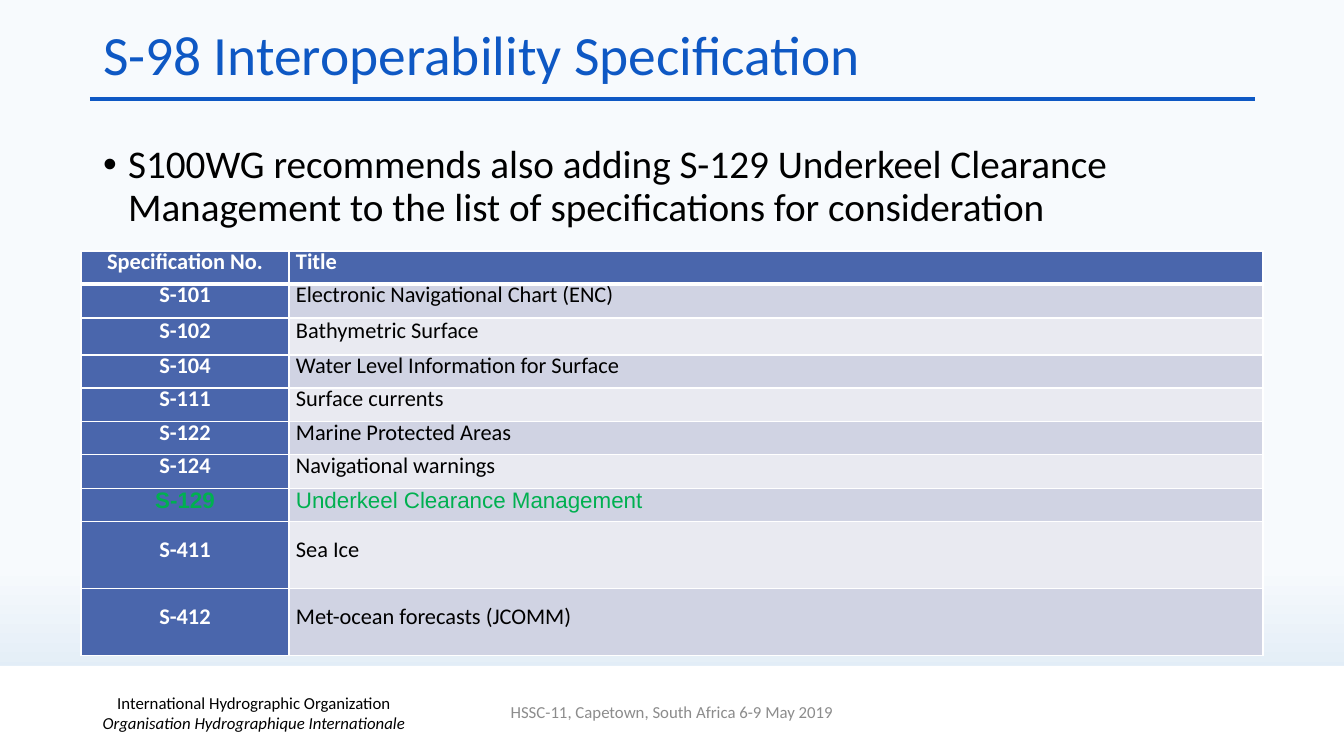
from lxml.etree import SubElement
from pptx import Presentation
from pptx.dml.color import RGBColor
from pptx.enum.shapes import MSO_CONNECTOR, MSO_SHAPE
from pptx.enum.text import MSO_ANCHOR, MSO_AUTO_SIZE, PP_ALIGN
from pptx.oxml.ns import qn
from pptx.util import Pt

WIDE, HIGH = 1344, 756
SCALE = 12192000 / WIDE

BLUE = RGBColor(0x0E, 0x58, 0xC4)
NAVY = RGBColor(0x4A, 0x66, 0xAC)
DARK = RGBColor(0xD0, 0xD3, 0xE3)
PALE = RGBColor(0xE9, 0xEA, 0xF1)
GREEN = RGBColor(0x00, 0xB0, 0x50)
GRAY = RGBColor(0x8C, 0x8C, 0x8C)
BLACK = RGBColor(0x00, 0x00, 0x00)
WHITE = RGBColor(0xFF, 0xFF, 0xFF)
SKY = RGBColor(0xF7, 0xFA, 0xFD)
SEA = RGBColor(0xD0, 0xE2, 0xF1)

ROWS = [
    ("Specification No.", "Title", 33),
    ("S-101", "Electronic Navigational Chart (ENC)", 34),
    ("S-102", "Bathymetric Surface", 37),
    ("S-104", "Water Level Information for Surface", 33),
    ("S-111", "Surface currents", 34),
    ("S-122", "Marine Protected Areas", 33),
    ("S-124", "Navigational warnings", 34),
    ("S-129", "Underkeel Clearance Management", 33),
    ("S-411", "Sea Ice", 67),
    ("S-412", "Met-ocean forecasts (JCOMM)", 67),
]
ADDED = "S-129"


def px(size):
    return round(size * SCALE)


def place(shape, box):
    shape.left, shape.top, shape.width, shape.height = map(px, box)


def style(para, size, color, bold=False, face="Calibri"):
    for run in para.runs:
        font = run.font
        font.name, font.size, font.bold = face, Pt(size), bold
        font.color.rgb = color


def label(slide, box, text, color):
    """A centred line of small text in a box."""
    frame = slide.shapes.add_textbox(*map(px, box)).text_frame
    frame.word_wrap = True
    frame.vertical_anchor = MSO_ANCHOR.MIDDLE
    para = frame.paragraphs[0]
    para.text = text
    para.alignment = PP_ALIGN.CENTER
    style(para, 12, color)
    return para


def paint(slide):
    """Background that deepens toward the foot."""
    fill = slide.background.fill
    fill.gradient()
    fill.gradient_angle = 270
    for stop, color, spot in zip(fill.gradient_stops, (SKY, SEA), (0.75, 1)):
        stop.color.rgb = color
        stop.position = spot


def head(slide, box):
    """Title with a rule below it."""
    left, top, width, height = box
    title = slide.shapes.title
    place(title, box)
    frame = title.text_frame
    frame.text = "S-98 Interoperability Specification"
    frame.auto_size = MSO_AUTO_SIZE.NONE
    frame.vertical_anchor = MSO_ANCHOR.MIDDLE
    para = frame.paragraphs[0]
    para.alignment = PP_ALIGN.LEFT
    para.line_spacing = 0.9
    style(para, 39.6, BLUE)

    base = px(top + height + 12)
    rule = slide.shapes.add_connector(
        MSO_CONNECTOR.STRAIGHT, px(left - 3), base, px(left + width + 3), base)
    rule.line.color.rgb = BLUE
    rule.line.width = Pt(2.25)
    SubElement(rule._element.spPr, qn("a:effectLst"))


def body(slide, box):
    """Bulleted recommendation."""
    holder = slide.placeholders[1]
    place(holder, box)
    frame = holder.text_frame
    frame.text = ("S100WG recommends also adding S-129 Underkeel Clearance "
                  "Management to the list of specifications for consideration")
    frame.auto_size = MSO_AUTO_SIZE.NONE
    para = frame.paragraphs[0]
    para.line_spacing = 0.9
    para.space_before = Pt(0)
    props = para._p.get_or_add_pPr()
    props.set("marL", str(px(25)))
    props.set("indent", str(-px(25)))
    SubElement(props, qn("a:buFont"), typeface="Arial")
    SubElement(props, qn("a:buChar"), char="•")
    style(para, 28, BLACK)


def edge(cell, over, under):
    """White borders, with the top and bottom widths given."""
    props = cell._tc.get_or_add_tcPr()
    for side, width in zip("LRTB", (1, 1, over, under)):
        line = SubElement(props, qn("a:ln" + side), w=str(Pt(width)))
        fill = SubElement(line, qn("a:solidFill"))
        SubElement(fill, qn("a:srgbClr"), val=str(WHITE))


def grid(slide, box):
    """Table of specifications."""
    left, top, width, lead = box
    high = sum(row[2] for row in ROWS)
    table = slide.shapes.add_table(
        len(ROWS), 2, *map(px, (left, top, width, high))).table
    table.columns[0].width = px(lead)
    table.columns[1].width = px(width - lead)
    for r, (code, name, tall) in enumerate(ROWS):
        table.rows[r].height = px(tall)
        for c, text in enumerate((code, name)):
            cell = table.cell(r, c)
            key = r == 0 or c == 0
            edge(cell, 3 if r == 1 else 1, 3 if r == 0 else 1)
            cell.fill.solid()
            cell.fill.fore_color.rgb = NAVY if key else DARK if r % 2 else PALE
            cell.margin_left = cell.margin_right = px(7)
            cell.margin_top = cell.margin_bottom = 0
            cell.vertical_anchor = MSO_ANCHOR.MIDDLE
            para = cell.text_frame.paragraphs[0]
            para.text = text
            para.alignment = PP_ALIGN.LEFT if c else PP_ALIGN.CENTER
            para.line_spacing = Pt(11.5)
            if code == ADDED:
                style(para, 16, GREEN, key, "Arial")
            else:
                style(para, 16, WHITE if key else BLACK, key)


def foot(slide, box):
    """White band with the organization and the meeting."""
    left, top, width, height = box
    band = slide.shapes.add_shape(MSO_SHAPE.RECTANGLE, *map(px, box))
    band.shadow.inherit = False
    band.fill.solid()
    band.fill.fore_color.rgb = WHITE
    band.line.fill.background()

    para = label(slide, (left + 27, top + 27, 454, 40),
                 "International Hydrographic Organization", BLACK)
    para.add_line_break()
    para.add_run().text = "Organisation Hydrographique Internationale"
    style(para, 12, BLACK)
    para.runs[1].font.italic = True
    label(slide, (left + (width - 454) // 2, top + 26, 454, 40),
          "HSSC-11, Capetown, South Africa 6-9 May 2019", GRAY)


def main():
    deck = Presentation()
    deck.slide_width, deck.slide_height = px(WIDE), px(HIGH)
    slide = deck.slides.add_slide(deck.slide_layouts[1])
    paint(slide)
    head(slide, (93, 28, 1159, 59))
    body(slide, (93, 140, 1159, 480))
    foot(slide, (0, 666, WIDE, HIGH - 666))
    grid(slide, (81, 251, 1182, 208))
    deck.save("out.pptx")


if __name__ == "__main__":
    main()
